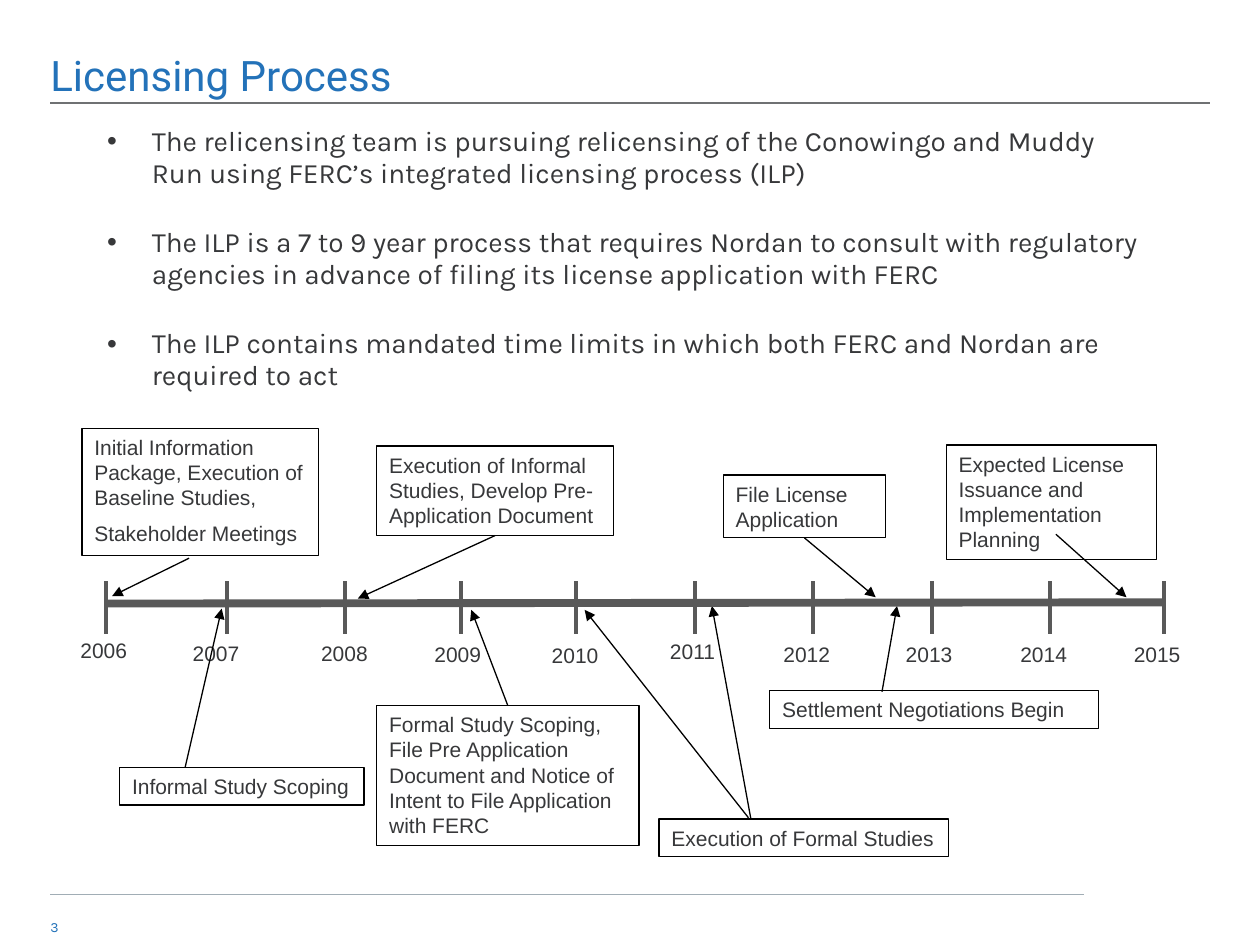
from lxml import etree
from pptx import Presentation
from pptx.dml.color import RGBColor
from pptx.enum.shapes import MSO_CONNECTOR as CONN, MSO_SHAPE as SHAPE
from pptx.enum.text import MSO_ANCHOR as ANCHOR, MSO_AUTO_SIZE as AUTO, PP_ALIGN as ALIGN
from pptx.oxml.ns import qn
from pptx.util import Pt

BLUE = RGBColor(0x23, 0x72, 0xB9)
TEXT = RGBColor(0x37, 0x38, 0x3A)
BLACK = RGBColor(0, 0, 0)
AXIS = RGBColor(0x59, 0x59, 0x59)
TITLE_RULE = RGBColor(0x6F, 0x71, 0x73)
FOOT_RULE = RGBColor(0xA1, 0xAD, 0xB5)

prs = Presentation()
prs.slide_width, prs.slide_height = Pt(720), Pt(540)
s = prs.slides.add_slide(prs.slide_layouts[5])


def add_line(x1, y1, x2, y2, color, width, arrow=False):
    c = s.shapes.add_connector(CONN.STRAIGHT, Pt(x1), Pt(y1), Pt(x2), Pt(y2))
    c.line.color.rgb = color
    c.line.width = Pt(width)
    if arrow:
        etree.SubElement(c.line._get_or_add_ln(), qn("a:tailEnd"), type="triangle")
    etree.SubElement(c._element.spPr, qn("a:effectLst"))
    return c


def add_run(p, text, font, size, color):
    r = p.add_run()
    r.text = text
    r.font.name, r.font.size, r.font.color.rgb = font, Pt(size), color


add_line(28.8, 511.2, 619.2, 511.2, FOOT_RULE, 1)
add_line(28.8, 59, 691.2, 59, TITLE_RULE, 1)

title = s.shapes.title
title.left, title.top, title.width, title.height = Pt(28.8), Pt(0), Pt(662.4), Pt(57.6)
body = s.shapes.add_textbox(Pt(52.6), Pt(72), Pt(604), Pt(139))
number = s.shapes.add_textbox(Pt(28.8), Pt(521.3), Pt(27.4), Pt(16.6))
for sp, anchor in ((title, ANCHOR.BOTTOM), (body, ANCHOR.TOP), (number, ANCHOR.MIDDLE)):
    tf = sp.text_frame
    tf.margin_left = tf.margin_right = tf.margin_top = tf.margin_bottom = 0
    tf.word_wrap = True
    tf.auto_size = AUTO.NONE
    tf.vertical_anchor = anchor

p = title.text_frame.paragraphs[0]
p.alignment = ALIGN.LEFT
p.line_spacing = 0.9
add_run(p, "Licensing Process", "Roboto", 24, BLUE)
add_run(number.text_frame.paragraphs[0], "3", "Karla", 8, BLUE)

bullets = [
    "The relicensing team is pursuing relicensing of the Conowingo and Muddy Run "
    "using FERC’s integrated licensing process (ILP)",
    "The ILP is a 7 to 9 year process that requires Nordan to consult with regulatory "
    "agencies in advance of filing its license application with FERC",
    "The ILP contains mandated time limits in which both FERC and Nordan are required to act",
]
tf = body.text_frame
for i, text in enumerate(bullets):
    p = tf.paragraphs[0] if i == 0 else tf.add_paragraph()
    pPr = p._p.get_or_add_pPr()
    pPr.set("marL", str(Pt(34.2)))
    pPr.set("indent", str(-Pt(25.6)))
    etree.SubElement(pPr, qn("a:buFont"), typeface="Arial")
    etree.SubElement(pPr, qn("a:buChar"), char="•")
    p.line_spacing = 0.95
    if i:
        p.space_before = Pt(21.4)
    add_run(p, text, "Karla", 16, TEXT)

boxes = {
    "issuance": (540.7, 254.2, 120.2, 65.5, ["Expected License Issuance and Implementation Planning"]),
    "filing": (413.3, 271.4, 92.9, 36, ["File License Application"]),
    "initial": (46.8, 244.8, 135.4, 72.7,
                ["Initial Information Package, Execution of Baseline Studies,", "Stakeholder Meetings"]),
    "informal scoping": (68.4, 438.5, 139.7, 21.6, ["Informal Study Scoping"]),
    "informal studies": (215.3, 254.9, 135.4, 51.1,
                         ["Execution of Informal Studies, Develop Pre- Application Document"]),
    "formal scoping": (215.3, 403.2, 149.8, 79.9,
                       ["Formal Study Scoping, File Pre Application Document and Notice of "
                        "Intent to File Application with FERC"]),
    "formal studies": (376.6, 468, 165.6, 21.6, ["Execution of Formal Studies"]),
    "settlement": (439.9, 394.6, 187.9, 21.6, ["Settlement Negotiations Begin"]),
}
milestones = {}
for name, (x, y, w, h, texts) in boxes.items():
    sp = s.shapes.add_shape(SHAPE.RECTANGLE, Pt(x), Pt(y), Pt(w), Pt(h))
    sp.shadow.inherit = False
    sp.fill.background()
    sp.line.color.rgb = BLACK
    sp.line.width = Pt(0.75)
    tf = sp.text_frame
    tf.word_wrap = True
    tf.vertical_anchor = ANCHOR.TOP
    for i, text in enumerate(texts):
        p = tf.paragraphs[0] if i == 0 else tf.add_paragraph()
        p.alignment = ALIGN.LEFT
        if i:
            p.space_before = Pt(6)
        add_run(p, text, "Arial", 12, TEXT)
    milestones[name] = sp

year_labels = [(38.9, 360.7), (103, 362.2), (176.4, 362.2), (241.2, 362.9), (308.2, 363.6),
               (375.8, 361.4), (440.6, 362.9), (510.5, 362.9), (576, 362.9), (640.8, 362.9)]
for year, (x, y) in enumerate(year_labels, 2006):
    sp = s.shapes.add_textbox(Pt(x), Pt(y), Pt(43.2), Pt(21.6))
    sp.text_frame.word_wrap = True
    add_run(sp.text_frame.paragraphs[0], str(year), "Arial", 12, TEXT)

arrows = [
    (108, 319, 64.1, 340.6, None, None),
    (603.4, 305.3, 643.7, 341.3, None, None),
    (105.8, 438.5, 126.7, 347.8, None, None),
    (427.7, 467.3, 334.1, 348.5, None, None),
    (429.1, 468, 406.8, 346.3, None, None),
    (504, 395.3, 512.6, 346.3, None, None),
    (283, 306, 204.5, 342, "informal studies", 2),
    (290.2, 403.2, 269.3, 348.5, "formal scoping", 0),
    (459.7, 307.4, 500.4, 341.3, "filing", 2),
]
for x1, y1, x2, y2, name, side in arrows:
    c = add_line(x1, y1, x2, y2, BLACK, 0.75, arrow=True)
    if name:
        c.begin_connect(milestones[name], side)

add_line(59.8, 344.9, 665.3, 344.2, AXIS, 4.5)
for x in (60.5, 129.6, 197.3, 263.5, 329, 397.4, 464.4, 532.8, 599.8, 665.3):
    add_line(x, 332.2, x, 362.4, AXIS, 2.25)

prs.save("out.pptx")
